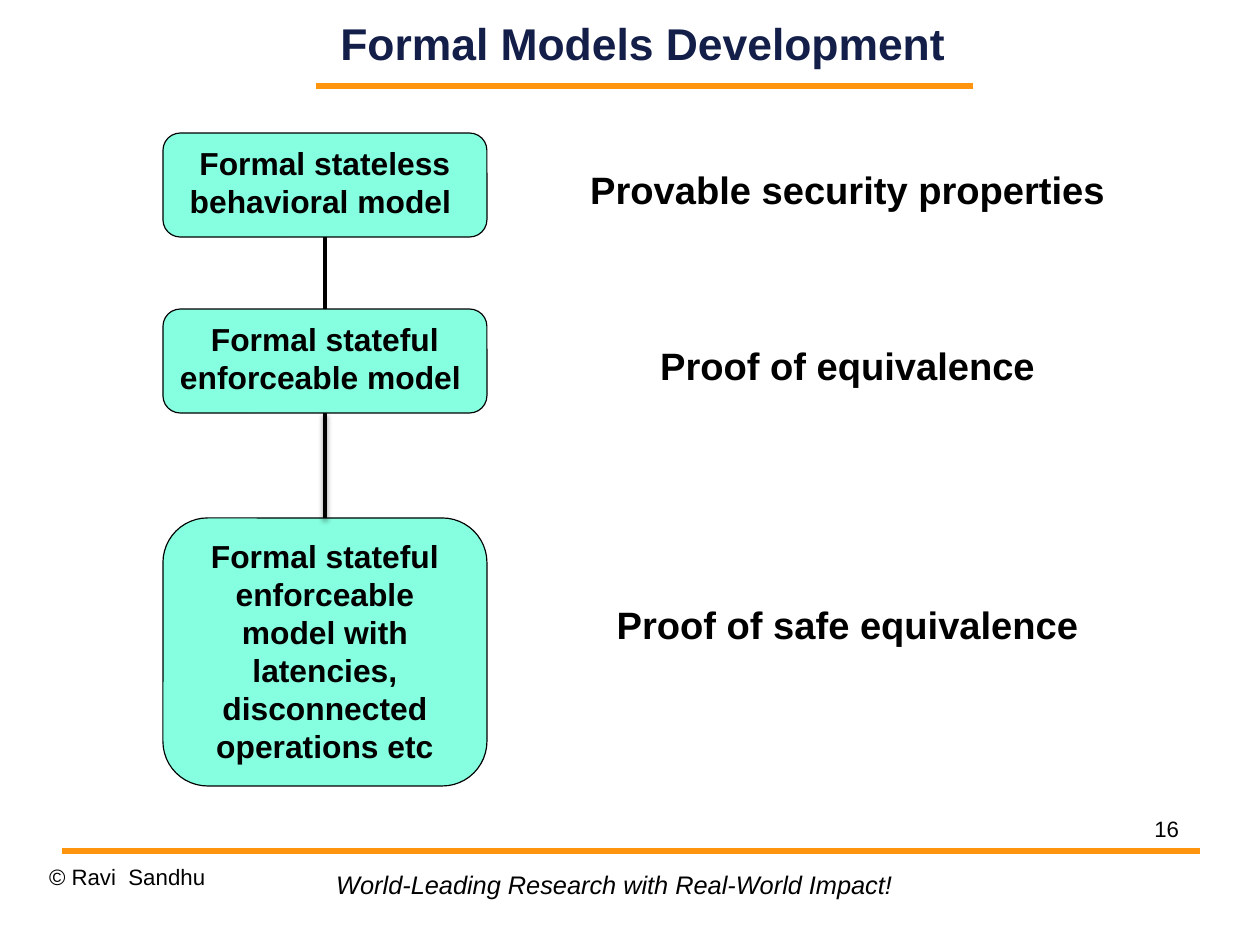
from lxml import etree
from pptx import Presentation
from pptx.dml.color import RGBColor
from pptx.enum.shapes import MSO_CONNECTOR, MSO_SHAPE
from pptx.enum.text import MSO_ANCHOR, PP_ALIGN
from pptx.oxml import parse_xml
from pptx.util import Pt

PX = 8000  # 114.3 px to the inch
LEFT, CENTER, RIGHT = PP_ALIGN.LEFT, PP_ALIGN.CENTER, PP_ALIGN.RIGHT
TOP, MIDDLE = MSO_ANCHOR.TOP, MSO_ANCHOR.MIDDLE
STRAIGHT, ROUNDED = MSO_CONNECTOR.STRAIGHT, MSO_SHAPE.ROUNDED_RECTANGLE
BOTTOM_SIDE, TOP_SIDE = 2, 0
BLACK, NAVY, ORANGE, MINT = "000000", "131F49", "FF950E", "85FFE0"
DRAWING_NS = "http://schemas.openxmlformats.org/drawingml/2006/main"
SOFT_SHADOW = (
    f'<a:outerShdw xmlns:a="{DRAWING_NS}" blurRad="39370" dist="22860" dir="5400000">'
    '<a:srgbClr val="000000"><a:alpha val="35000"/></a:srgbClr></a:outerShdw>'
)


def write(shape, text, size, align=LEFT, anchor=TOP, color=BLACK,
          bold=False, italic=False, wrap=True, inset=True):
    """Put one formatted paragraph into a shape or text box."""
    frame = shape.text_frame
    frame.text = text
    frame.word_wrap = wrap
    frame.vertical_anchor = anchor
    if not inset:
        frame.margin_left = frame.margin_right = 0
        frame.margin_top = frame.margin_bottom = 0
    paragraph = frame.paragraphs[0]
    paragraph.alignment = align
    font = paragraph.runs[0].font
    font.name, font.size = "Arial", Pt(size)
    font.bold, font.italic = bold, italic
    font.color.rgb = RGBColor.from_string(color)


def draw_line(x1, y1, x2, y2, color, width):
    """Add a straight line; return it with its empty effect list."""
    line = slide.shapes.add_connector(STRAIGHT, x1 * PX, y1 * PX, x2 * PX, y2 * PX)
    line.line.color.rgb = RGBColor.from_string(color)
    line.line.width = Pt(width)
    effects = etree.SubElement(line._element.spPr, f"{{{DRAWING_NS}}}effectLst")
    return line, effects


prs = Presentation()
prs.slide_width, prs.slide_height = 1260 * PX, 945 * PX
slide = prs.slides.add_slide(prs.slide_layouts[6])

# Title and footer
draw_line(316, 86, 973, 86, ORANGE, 4.31)
draw_line(62, 851, 1200, 851, ORANGE, 4.31)

frame_texts = [
    ((885, 815, 294, 65), "16", dict(size=14, align=RIGHT, inset=False)),
    ((275, 0, 735, 86), "Formal Models Development",
     dict(size=28, align=CENTER, anchor=MIDDLE, color=NAVY, bold=True, inset=False)),
    ((49, 863, 294, 65), "© Ravi  Sandhu", dict(size=14, inset=False)),
    ((325, 863, 581, 42), "World-Leading Research with Real-World Impact!",
     dict(size=16, italic=True, wrap=False)),
]
for place, text, style in frame_texts:
    write(slide.shapes.add_textbox(*(v * PX for v in place)), text, **style)

# Models on the left, what is shown for each on the right
stages = [
    (133, 104, "Formal stateless behavioral model ", 161, "Provable security properties"),
    (309, 104, "Formal stateful enforceable model ", 337, "Proof of equivalence"),
    (518, 268, "Formal stateful enforceable model with latencies, "
     "disconnected operations etc", 596, "Proof of safe equivalence"),
]
models = []
for top, height, model_name, proof_top, proof_name in stages:
    model = slide.shapes.add_shape(ROUNDED, 163 * PX, top * PX, 324 * PX, height * PX)
    model.shadow.inherit = False
    model.fill.solid()
    model.fill.fore_color.rgb = RGBColor.from_string(MINT)
    model.line.color.rgb = RGBColor.from_string(BLACK)
    model.line.width = Pt(0.75)
    write(model, model_name, 20, align=CENTER, bold=True)
    models.append(model)

    proof = slide.shapes.add_textbox(576 * PX, proof_top * PX, 543 * PX, 58 * PX)
    write(proof, proof_name, 24, align=CENTER, bold=True, wrap=False)

for upper, lower in zip(models, models[1:]):
    link, link_effects = draw_line(325, 237, 325, 309, BLACK, 3)
    link.begin_connect(upper, BOTTOM_SIDE)
    link.end_connect(lower, TOP_SIDE)
link_effects.append(parse_xml(SOFT_SHADOW))  # only the last link has a shadow

prs.save("out.pptx")
